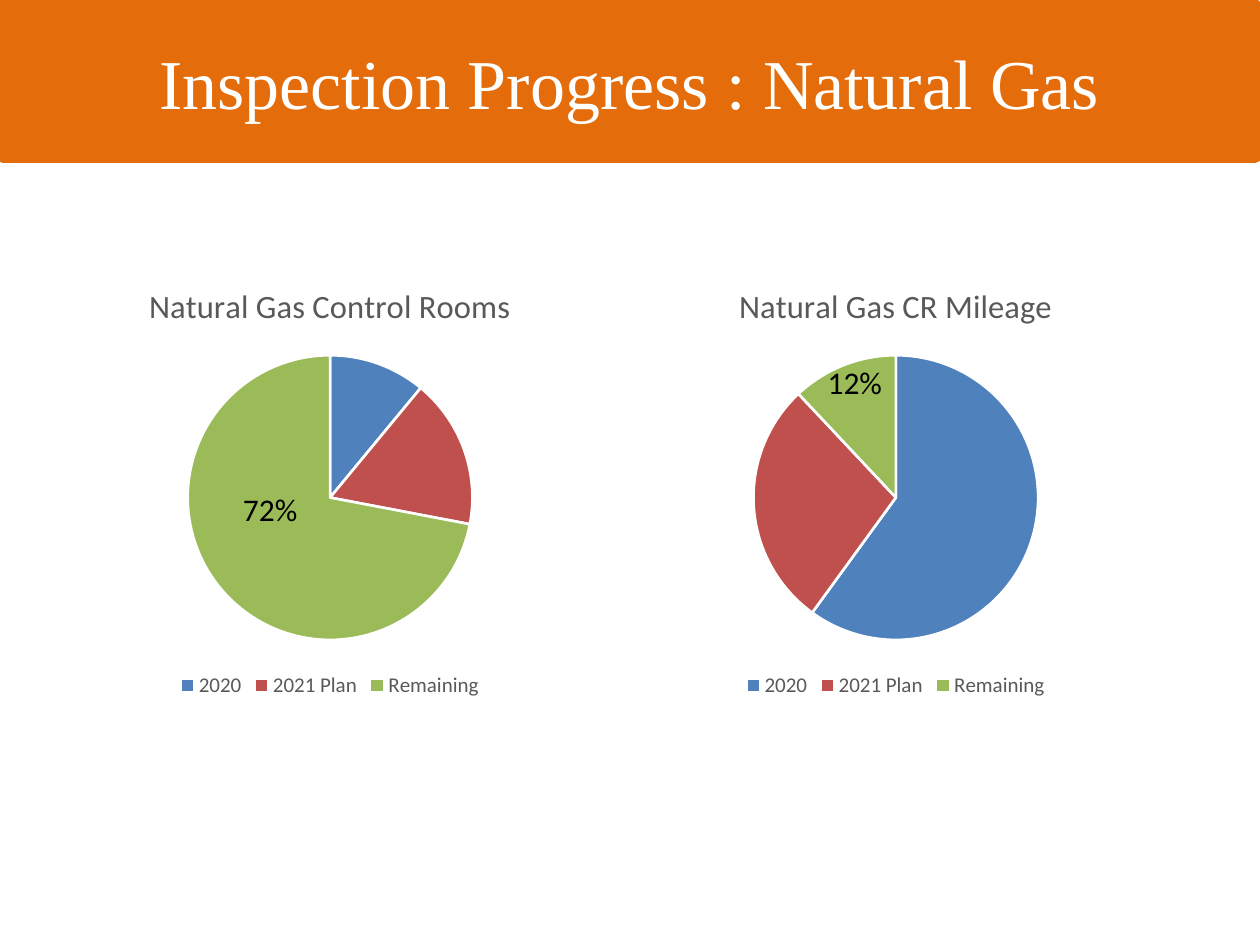
from dataclasses import dataclass

from lxml import etree
from pptx import Presentation
from pptx.chart.data import CategoryChartData as ChartData
from pptx.dml.color import RGBColor as RGB
from pptx.enum.chart import XL_CHART_TYPE as ChartType, XL_LEGEND_POSITION as LegendPos
from pptx.enum.shapes import MSO_SHAPE as Shape
from pptx.enum.text import MSO_ANCHOR as Anchor, MSO_AUTO_SIZE as AutoSize, PP_ALIGN as Align
from pptx.oxml.ns import qn
from pptx.util import Inches, Pt


@dataclass(frozen=True)
class Theme:
    banner: str = "E46C0A"
    white: str = "FFFFFF"
    black: str = "000000"
    grey: str = "595959"
    slices: tuple = ("4F81BD", "C0504D", "9BBB59")
    heading_font: str = "Times New Roman"
    body_font: str = "Calibri"
    heading_size: float = 40
    chart_title_size: float = 18.6
    legend_size: float = 12
    label_size: float = 18
    base_size: float = 10
    banner_line: float = 6.75
    slice_line: float = 1.5


CATEGORIES = ("2020", "2021 Plan", "Remaining")
CHART_TOP, CHART_HEIGHT = 2.08, 3.5
PIE_TOP, PIE_SIZE = 2.82, 2.26
# title, values, chart left, chart width, label left, label top
PIES = (
    ("Natural Gas Control Rooms", (11, 17, 72), 0.58, 4.08, 1.83, 3.84),
    ("Natural Gas CR Mileage", (60, 28, 12), 5, 4.22, 6.47, 2.83),
)


class SlideBuilder:
    def __init__(self, slide, theme):
        self.slide, self.theme = slide, theme

    def style_font(self, font, size, color, name=None):
        values = {"size": Pt(size), "name": name or self.theme.body_font, "bold": False}
        for key, value in values.items():
            setattr(font, key, value)
        font.color.rgb = RGB.from_string(color)

    def banner(self, text, left, top, width, height):
        t = self.theme
        sp = self.slide.shapes.add_shape(
            Shape.RECTANGLE, Inches(left), Inches(top), Inches(width), Inches(height))
        sp.shadow.inherit = False
        for fill in (sp.fill, sp.line.fill):
            fill.solid()
            fill.fore_color.rgb = RGB.from_string(t.banner)
        sp.line.width = Pt(t.banner_line)
        tf = sp.text_frame
        tf.word_wrap, tf.vertical_anchor = True, Anchor.MIDDLE
        p = tf.paragraphs[0]
        p.alignment = Align.CENTER
        r = p.add_run()
        r.text = text
        self.style_font(r.font, t.heading_size, t.white, t.heading_font)

    def pie(self, title, values, left, width):
        t = self.theme
        data = ChartData()
        data.categories = CATEGORIES
        data.add_series(title, values)
        chart = self.slide.shapes.add_chart(
            ChartType.PIE, Inches(left), Inches(CHART_TOP),
            Inches(width), Inches(CHART_HEIGHT), data).chart
        self.style_font(chart.font, t.base_size, t.black)

        chart.has_title = True
        p = chart.chart_title.text_frame.paragraphs[0]
        r = p.add_run()
        r.text = title
        self.style_font(r.font, t.chart_title_size, t.grey)
        chart.has_legend = True
        chart.legend.position = LegendPos.BOTTOM
        chart.legend.include_in_layout = False
        self.style_font(chart.legend.font, t.legend_size, t.grey)

        plot = chart.plots[0]
        plot.vary_by_categories = True
        for i, color in enumerate(t.slices):
            fmt = plot.series[0].points[i].format
            fmt.fill.solid()
            fmt.fill.fore_color.rgb = RGB.from_string(color)
            fmt.line.color.rgb = RGB.from_string(t.white)
            fmt.line.width = Pt(t.slice_line)
        self.place_plot(chart, width)

    def place_plot(self, chart, width):
        """Centre the pie across the chart at a fixed size."""
        area = chart._chartSpace.find(".//" + qn("c:plotArea"))
        for old in area.findall(qn("c:layout")):
            area.remove(old)
        layout = etree.Element(qn("c:layout"))
        area.insert(0, layout)
        manual = etree.SubElement(layout, qn("c:manualLayout"))
        settings = {
            "layoutTarget": "inner", "xMode": "edge", "yMode": "edge",
            "x": (1 - PIE_SIZE / width) / 2,
            "y": (PIE_TOP - CHART_TOP) / CHART_HEIGHT,
            "w": PIE_SIZE / width,
            "h": PIE_SIZE / CHART_HEIGHT,
        }
        for tag, value in settings.items():
            etree.SubElement(manual, qn("c:" + tag)).set("val", str(value))

    def label(self, text, left, top):
        t = self.theme
        sp = self.slide.shapes.add_textbox(
            Inches(left), Inches(top), Inches(0.64), Inches(0.4))
        tf = sp.text_frame
        settings = {"word_wrap": False, "vertical_anchor": Anchor.MIDDLE,
                    "auto_size": AutoSize.SHAPE_TO_FIT_TEXT}
        for key, value in settings.items():
            setattr(tf, key, value)
        r = tf.paragraphs[0].add_run()
        r.text = text
        self.style_font(r.font, t.label_size, t.black)


def main():
    prs = Presentation()
    prs.slide_width, prs.slide_height = Inches(10), Inches(7.5)
    s = SlideBuilder(prs.slides.add_slide(prs.slide_layouts[6]), Theme())
    s.banner("Inspection Progress : Natural Gas", 0.03, 0.04, 9.93, 1.21)
    for title, values, left, width, _, _ in PIES:
        s.pie(title, values, left, width)
    for _, values, _, _, left, top in PIES:
        s.label(f"{values[-1]}%", left, top)
    prs.save("out.pptx")


if __name__ == "__main__":
    main()
